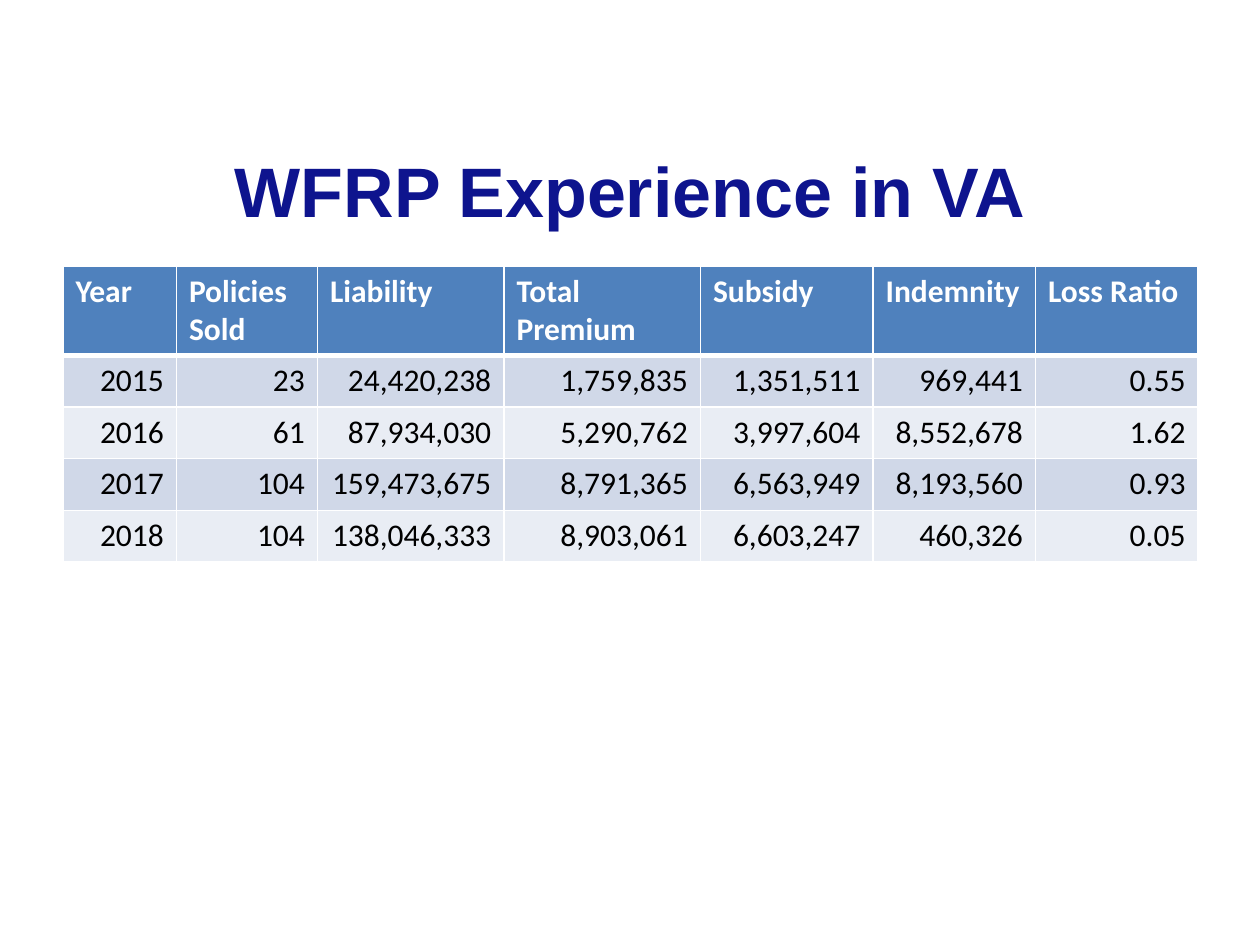
from lxml import etree
from pptx import Presentation
from pptx.dml.color import RGBColor
from pptx.enum.text import MSO_ANCHOR, PP_ALIGN
from pptx.oxml.ns import qn
from pptx.util import Inches, Pt

NAVY = RGBColor(0x0E, 0x14, 0x8E)
BLUE = RGBColor(0x4F, 0x81, 0xBD)
BAND_DARK = RGBColor(0xD0, 0xD8, 0xE8)
BAND_LIGHT = RGBColor(0xE9, 0xED, 0xF4)
WHITE = RGBColor(0xFF, 0xFF, 0xFF)
BLACK = RGBColor(0x00, 0x00, 0x00)

TITLE_FONT = {"name": "Arial", "size": Pt(40), "bold": True}
HEADER_FONT = {"name": "Calibri", "size": Pt(18), "bold": True}
BODY_FONT = {**HEADER_FONT, "bold": False}

COLUMN_WIDTHS = [0.9, 1.12, 1.48, 1.56, 1.37, 1.29, 1.29]
HEADER_HEIGHT, ROW_HEIGHT = 0.7, 0.41
HEADERS = ["Year", "Policies Sold", "Liability", "Total Premium",
           "Subsidy", "Indemnity", "Loss Ratio"]
RECORDS = [
    ["2015", "23", "24,420,238", "1,759,835", "1,351,511", "969,441", "0.55"],
    ["2016", "61", "87,934,030", "5,290,762", "3,997,604", "8,552,678", "1.62"],
    ["2017", "104", "159,473,675", "8,791,365", "6,563,949", "8,193,560", "0.93"],
    ["2018", "104", "138,046,333", "8,903,061", "6,603,247", "460,326", "0.05"],
]


class SlideBuilder:
    def __init__(self, slide):
        self.slide = slide

    def styled_text(self, text_frame, text, font_values, color, alignment):
        text_frame.text = text
        paragraph = text_frame.paragraphs[0]
        paragraph.alignment = alignment
        font = paragraph.runs[0].font
        for name, value in font_values.items():
            setattr(font, name, value)
        font.color.rgb = color

    def title(self, text, left, top, width, height):
        shape = self.slide.shapes.title
        box = {"left": left, "top": top, "width": width, "height": height}
        for name, value in box.items():
            setattr(shape, name, Inches(value))
        shape.text_frame.vertical_anchor = MSO_ANCHOR.MIDDLE
        self.styled_text(shape.text_frame, text, TITLE_FONT, NAVY, PP_ALIGN.CENTER)

    def borders(self, cell, bottom_width):
        properties = cell._tc.get_or_add_tcPr()
        widths = {"a:lnL": 1, "a:lnR": 1, "a:lnT": 1, "a:lnB": bottom_width}
        for position, (tag, width) in enumerate(widths.items()):
            line = etree.Element(qn(tag), w=str(Pt(width)))
            fill = etree.SubElement(line, qn("a:solidFill"))
            etree.SubElement(fill, qn("a:srgbClr"), val=str(WHITE))
            properties.insert(position, line)

    def cell(self, cell, text, is_header, fill):
        cell.fill.solid()
        cell.fill.fore_color.rgb = fill
        if is_header:
            self.styled_text(cell.text_frame, text, HEADER_FONT, WHITE, PP_ALIGN.LEFT)
        else:
            self.styled_text(cell.text_frame, text, BODY_FONT, BLACK, PP_ALIGN.RIGHT)
        self.borders(cell, 3 if is_header else 1)

    def table(self, left, top, headers, records):
        rows = [headers, *records]
        heights = [HEADER_HEIGHT] + [ROW_HEIGHT] * len(records)
        table = self.slide.shapes.add_table(
            len(rows), len(headers), Inches(left), Inches(top),
            Inches(sum(COLUMN_WIDTHS)), Inches(sum(heights))).table
        for column, width in zip(table.columns, COLUMN_WIDTHS):
            column.width = Inches(width)
        for index, (values, height) in enumerate(zip(rows, heights)):
            table.rows[index].height = Inches(height)
            band = BAND_DARK if index % 2 else BAND_LIGHT
            fill = BLUE if index == 0 else band
            for cell, value in zip(table.rows[index].cells, values):
                self.cell(cell, value, index == 0, fill)


def main():
    presentation = Presentation()
    presentation.slide_width = Inches(10)
    presentation.slide_height = Inches(7.5)
    title_only = presentation.slide_layouts[5]
    builder = SlideBuilder(presentation.slides.add_slide(title_only))

    # Heading
    builder.title("WFRP Experience in VA", 0.5, 1.14, 9, 0.73)

    # Yearly results
    builder.table(0.5, 2.11, HEADERS, RECORDS)

    presentation.save("out.pptx")


if __name__ == "__main__":
    main()
